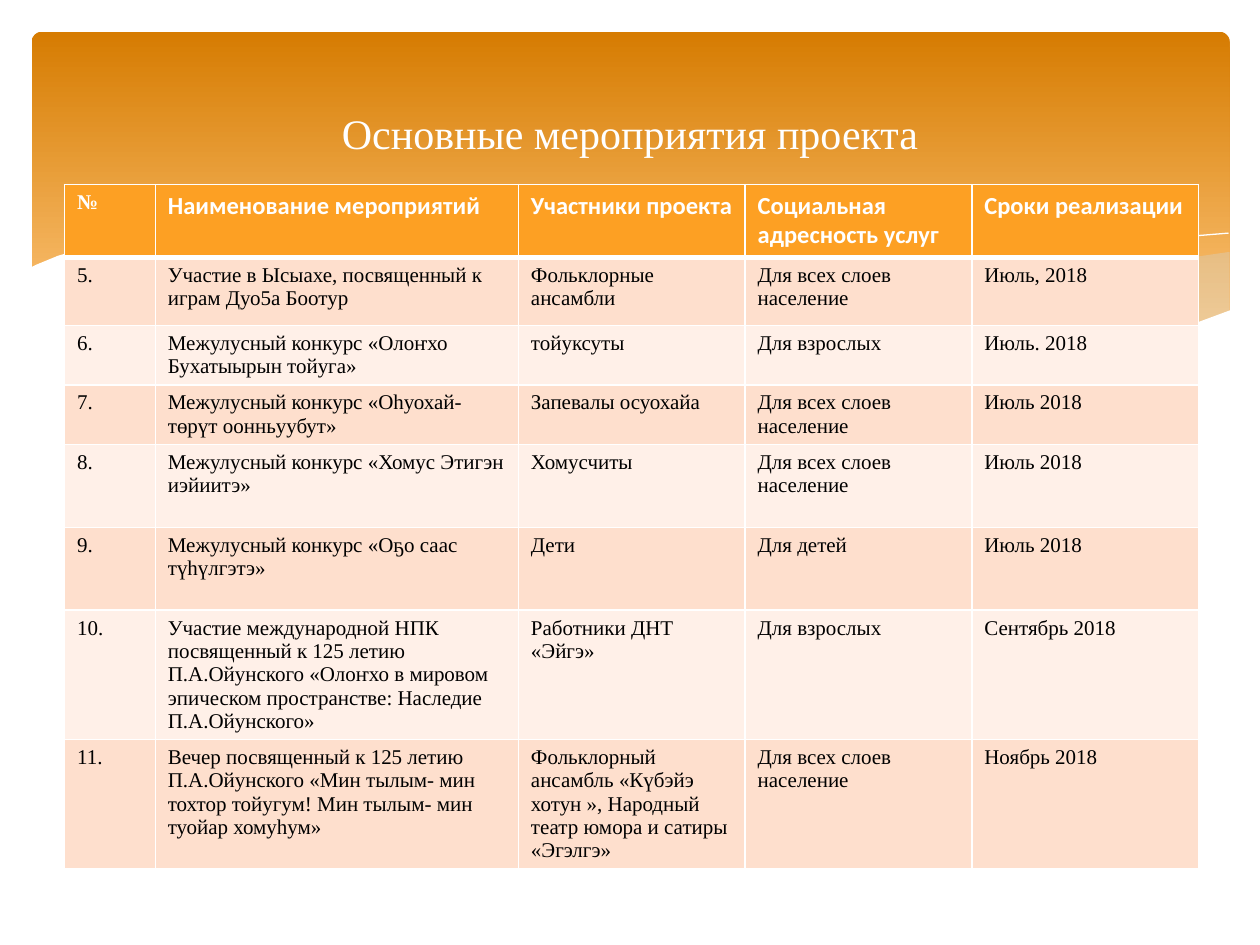
"""Build the slide with the table of the project's main events."""
from lxml.etree import SubElement as Sub
from pptx import Presentation as Deck
from pptx.dml.color import RGBColor as RGB
from pptx.enum.shapes import MSO_SHAPE as Kind
from pptx.enum.text import MSO_ANCHOR as Anchor, PP_ALIGN as Align
from pptx.oxml.ns import qn
from pptx.util import Cm, Pt

WHITE = RGB(0xFF, 0xFF, 0xFF)
BLACK = RGB(0, 0, 0)
DARK = RGB(0xD6, 0x7C, 0x02)
LIGHT = RGB(0xFE, 0xC6, 0x7B)
MIST = RGB(0xCC, 0xDD, 0xEA)
HEAD = RGB(0xFD, 0xA0, 0x23)
BANDS = RGB(0xFF, 0xF0, 0xE8), RGB(0xFE, 0xDF, 0xCD)
SERIF = "Times New Roman"
ALL = "Для всех слоев население"
ADULT = "Для взрослых"
JULY = "Июль 2018"


def style(font, form):
    for key, val in form.items():
        if key == "color":
            font.color.rgb = val
        else:
            setattr(font, key, val)


def edge(cell, side, width):
    line = Sub(cell._tc.get_or_add_tcPr(), qn("a:" + side), w=str(Pt(width)))
    fill = Sub(line, qn("a:solidFill"))
    Sub(fill, qn("a:srgbClr"), val=str(WHITE))


deck = Deck()
deck.slide_width, deck.slide_height = Cm(25.4), Cm(19.05)
slide = deck.slides.add_slide(deck.slide_layouts[5])
shapes = slide.shapes

panel = shapes.add_shape(Kind.ROUNDED_RECTANGLE, Cm(0.64), Cm(0.64), Cm(24.15), Cm(6.86))
panel.adjustments[0] = 0.03
panel.shadow.inherit = False
panel.line.fill.background()
panel.fill.gradient()
panel.fill.gradient_angle = 270
for stop, color, place in zip(panel.fill.gradient_stops, (DARK, LIGHT), (0, 0.9)):
    stop.color.rgb = color
    stop.position = place

waves = [
    (MIST, 29, [
        (975, 200), (948, 204), (921, 210), (891, 216), (861, 223), (805, 237),
        (753, 248), (706, 257), (661, 265), (691, 269), (719, 272), (745, 275),
        (769, 277), (803, 278), (835, 277), (863, 275), (889, 272), (913, 267),
        (935, 262), (949, 257), (976, 247), (976, 200)]),
    (MIST, 40, [
        (893, 273), (866, 269), (807, 260), (741, 247), (668, 231), (598, 214),
        (555, 205), (514, 198), (465, 191), (420, 187), (380, 185), (344, 186),
        (313, 188), (286, 191), (323, 196), (362, 203), (404, 211), (449, 222),
        (530, 240), (601, 255), (665, 266), (722, 274), (773, 277), (818, 278),
        (857, 277)]),
    (None, 100, [
        (309, 195), (328, 192), (353, 189), (387, 187), (433, 187), (489, 190),
        (533, 194), (582, 200), (636, 208), (695, 219), (760, 233), (831, 251),
        (907, 272)]),
    (None, 100, [
        (613, 257), (653, 246), (695, 235), (748, 223), (806, 210), (866, 199),
        (910, 192), (951, 187), (975, 185)]),
    (WHITE, 100, [
        (977, 246), (950, 256), (920, 265), (887, 271), (850, 275), (809, 277),
        (761, 275), (708, 270), (648, 262), (579, 250), (503, 233), (447, 220),
        (391, 207), (340, 197), (292, 190), (250, 186), (211, 184), (177, 184),
        (146, 185), (119, 187), (95, 191), (67, 197), (46, 203), (29, 210),
        (23, 213), (23, 329), (977, 329)]),
]
for color, alpha, dots in waves:
    pen = shapes.build_freeform(*dots[0], scale=Cm(2.54) / 100)
    pen.add_line_segments(dots[1:], close=color is not None)
    wave = pen.convert_to_shape()
    wave.shadow.inherit = False
    if color is None:
        wave.fill.background()
        wave.line.color.rgb = WHITE
        wave.line.width = Pt(0)
        continue
    wave.line.fill.background()
    wave.fill.solid()
    wave.fill.fore_color.rgb = color
    if alpha < 100:
        tint = wave._element.spPr.find(qn("a:solidFill"))[0]
        Sub(tint, qn("a:alpha"), val=str(alpha * 1000))

rows = [
    (1.47, "№", "Наименование мероприятий", "Участники проекта",
     "Социальная адресность услуг", "Сроки реализации"),
    (1.37, "5.", "Участие в Ысыахе, посвященный к играм Дуо5а Боотур",
     "Фольклорные ансамбли", ALL, "Июль, 2018"),
    (1.2, "6.", "Межулусный конкурс «Олоҥхо Бухатыырын тойуга»",
     "тойуксуты", ADULT, "Июль. 2018"),
    (1.2, "7.", "Межулусный конкурс «Оһуохай-төрүт оонньуубут»",
     "Запевалы осуохайа", ALL, JULY),
    (1.67, "8.", "Межулусный конкурс «Хомус Этигэн иэйиитэ»",
     "Хомусчиты", ALL, JULY),
    (1.67, "9.", "Межулусный конкурс «Оҕо саас түһүлгэтэ»",
     "Дети", "Для детей", JULY),
    (2.6, "10.", "Участие международной НПК посвященный к 125 летию П.А.Ойунского "
     "«Олоҥхо в мировом эпическом пространстве: Наследие П.А.Ойунского»",
     "Работники ДНТ «Эйгэ»", ADULT, "Сентябрь 2018"),
    (2.6, "11.", "Вечер посвященный к 125 летию П.А.Ойунского «Мин тылым- мин "
     "тохтор тойугум! Мин тылым- мин туойар хомуһум»",
     "Фольклорный ансамбль «Күбэйэ хотун », Народный театр юмора и сатиры «Эгэлгэ»",
     ALL, "Ноябрь 2018"),
]
wide = [1.83, 7.32, 4.57, 4.57, 4.57]
top = {"name": "Calibri", "size": Pt(14), "bold": True, "color": WHITE}
body = {"name": SERIF, "size": Pt(12), "bold": False, "color": BLACK}
first = {**body, "bold": True, "color": WHITE}

frame = shapes.add_table(len(rows), len(wide), Cm(1.3), Cm(3.72),
                         Cm(sum(wide)), Cm(sum(row[0] for row in rows)))
table = frame.table
for col, width in zip(table.columns, wide):
    col.width = Cm(width)
for i, (high, *texts) in enumerate(rows):
    table.rows[i].height = Cm(high)
    for j, text in enumerate(texts):
        cell = table.cell(i, j)
        cell.text = text
        form = body if i else top if j else first
        style(cell.text_frame.paragraphs[0].runs[0].font, form)
        for side in ("lnL", "lnR", "lnT", "lnB"):
            thick = (i, side) in ((0, "lnB"), (1, "lnT"))
            edge(cell, side, 3 if thick else 1)
        cell.fill.solid()
        cell.fill.fore_color.rgb = BANDS[i % 2] if i else HEAD

title = shapes.title
title.left, title.top, title.width, title.height = Cm(1.27), Cm(0.94), Cm(22.86), Cm(3.48)
title.text_frame.text = "Основные мероприятия проекта"
title.text_frame.vertical_anchor = Anchor.MIDDLE
line = title.text_frame.paragraphs[0]
line.alignment = Align.CENTER
style(line.runs[0].font, {"name": SERIF, "size": Pt(24), "color": WHITE})
shapes._spTree.append(title._element)

deck.save("out.pptx")
